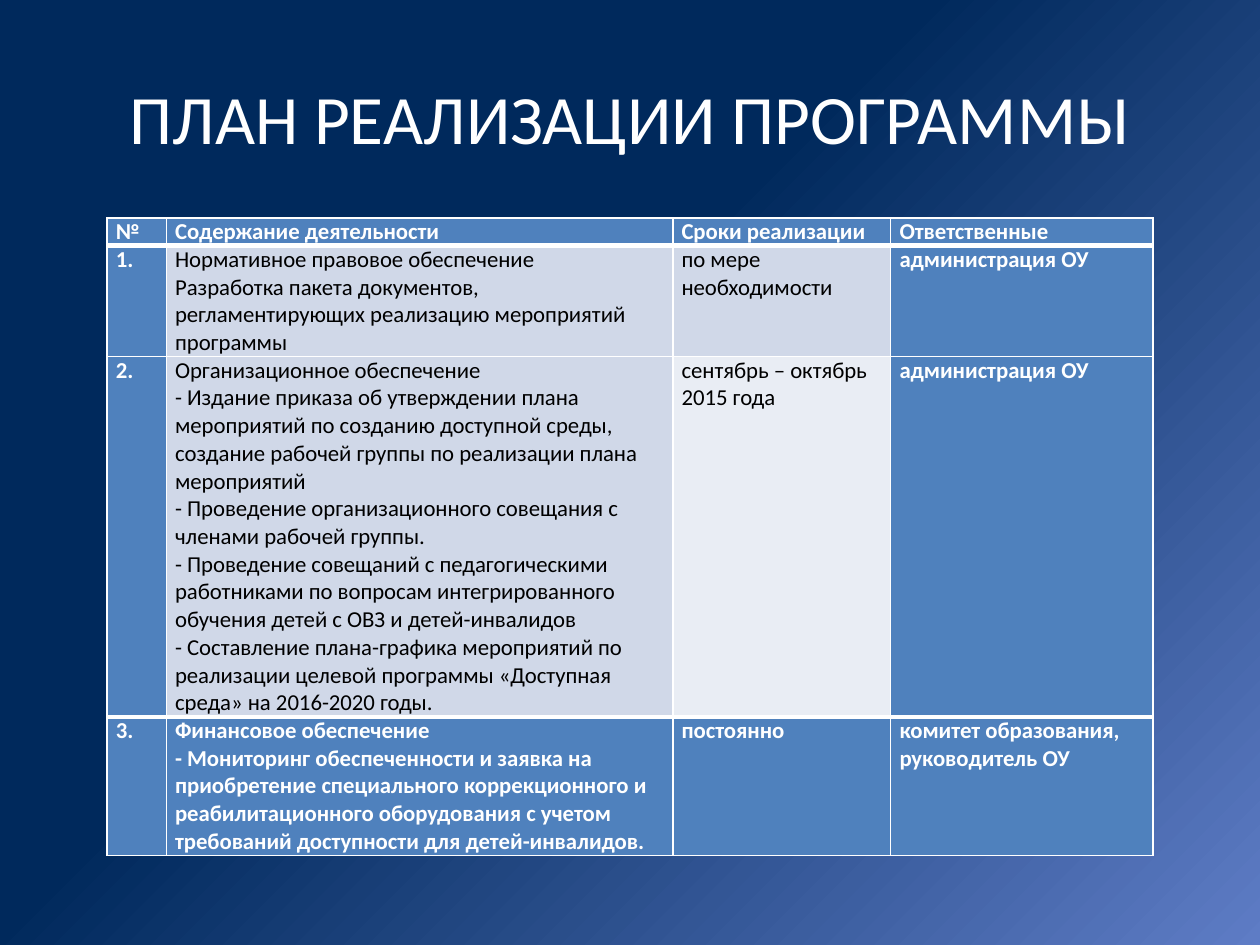
from dataclasses import dataclass

from lxml.etree import SubElement
from pptx import Presentation
from pptx.dml.color import RGBColor
from pptx.enum.text import MSO_ANCHOR, PP_ALIGN
from pptx.oxml.ns import qn
from pptx.util import Inches, Pt


@dataclass(frozen=True)
class Theme:
    font: str = "Calibri"
    title_size: float = 39.6
    table_size: float = 13
    light: str = "FFFFFF"
    dark: str = "000000"
    accent: str = "4F81BD"
    band: str = "D0D8E8"
    pale: str = "E9EDF4"
    glow: str = "5E7CC5"
    night: str = "00295C"
    thin: float = 1
    thick: float = 3


class PlanSlide:
    def __init__(self, deck, theme):
        self.theme = theme
        self.width, self.height = deck.slide_width, deck.slide_height
        self.slide = deck.slides.add_slide(deck.slide_layouts[6])

    def box(self, left, top, width, height):
        return (int(left * self.width), int(top * self.height),
                int(width * self.width), int(height * self.height))

    def style(self, paragraph, size, color, bold=False):
        font = paragraph.font
        font.name, font.size, font.bold = self.theme.font, Pt(size), bold
        font.color.rgb = RGBColor.from_string(color)

    def background(self):
        fill = self.slide.background.fill
        fill.gradient()
        stops = ((0, self.theme.glow), (0.58, self.theme.night))
        for stop, (position, color) in zip(fill.gradient_stops, stops):
            stop.position = position
            stop.color.rgb = RGBColor.from_string(color)
        gradient = self.slide.element.find(".//" + qn("a:gradFill"))
        gradient.remove(gradient.find(qn("a:lin")))
        glow = SubElement(gradient, qn("a:path"), {"path": "circle"})
        SubElement(glow, qn("a:fillToRect"), l="100000", t="100000")

    def title(self, wording, *place):
        frame = self.slide.shapes.add_textbox(*self.box(*place)).text_frame
        frame.word_wrap = True
        frame.vertical_anchor = MSO_ANCHOR.MIDDLE
        heading = frame.paragraphs[0]
        heading.text = wording
        heading.alignment = PP_ALIGN.CENTER
        self.style(heading, self.theme.title_size, self.theme.light)

    def borders(self, cell, widths):
        properties = cell._tc.get_or_add_tcPr()
        for index, (side, width) in enumerate(zip("LRTB", widths)):
            line = properties.makeelement(qn(f"a:ln{side}"), {"w": str(Pt(width))})
            properties.insert(index, line)
            solid = SubElement(line, qn("a:solidFill"))
            SubElement(solid, qn("a:srgbClr"), val=self.theme.light)

    def cell(self, cell, wording, fill, rules):
        cell.margin_left = cell.margin_right = Inches(0.07)
        cell.margin_top = cell.margin_bottom = 0
        cell.fill.solid()
        cell.fill.fore_color.rgb = RGBColor.from_string(fill)
        cell.text = wording
        strong = fill == self.theme.accent
        color = self.theme.light if strong else self.theme.dark
        for paragraph in cell.text_frame.paragraphs:
            self.style(paragraph, self.theme.table_size, color, strong)
        self.borders(cell, (self.theme.thin, self.theme.thin, *rules))

    def table(self, rows, fills, column_shares, row_shares, left, top):
        place = self.box(left, top, sum(column_shares), sum(row_shares))
        table = self.slide.shapes.add_table(
            len(rows), len(column_shares), *place).table
        table.horz_banding = False
        for column, share in zip(table.columns, column_shares):
            column.width = int(share * self.width)
        for row, share in zip(table.rows, row_shares):
            row.height = int(share * self.height)
        last = len(rows) - 1
        thin, thick = self.theme.thin, self.theme.thick
        for r, (texts, colors) in enumerate(zip(rows, fills)):
            rules = (thick if r in (1, last) else thin,
                     thick if r in (0, last - 1) else thin)
            for c, (wording, fill) in enumerate(zip(texts, colors)):
                self.cell(table.cell(r, c), wording, fill, rules)


PLAN = [
    ("№", "Содержание деятельности", "Сроки реализации", "Ответственные"),
    ("1.",
     "Нормативное правовое обеспечение\n"
     "Разработка пакета документов, регламентирующих реализацию мероприятий программы",
     "по мере необходимости", "администрация ОУ"),
    ("2.",
     "Организационное обеспечение\n"
     "- Издание приказа об утверждении плана мероприятий по созданию доступной среды, "
     "создание рабочей группы по реализации плана мероприятий\n"
     "- Проведение организационного совещания с членами рабочей группы.\n"
     "- Проведение совещаний с педагогическими работниками по вопросам "
     "интегрированного обучения детей с ОВЗ и детей-инвалидов\n"
     "- Составление плана-графика мероприятий по реализации целевой программы "
     "«Доступная среда» на 2016-2020 годы.",
     "сентябрь – октябрь 2015 года", "администрация ОУ"),
    ("3.",
     "Финансовое обеспечение\n"
     "- Мониторинг обеспеченности и заявка на приобретение специального коррекционного "
     "и реабилитационного оборудования с учетом требований доступности для детей-инвалидов.",
     "постоянно", "комитет образования, руководитель ОУ"),
]


def main():
    deck = Presentation()
    deck.slide_width, deck.slide_height = Inches(10), Inches(7.5)
    theme = Theme()
    page = PlanSlide(deck, theme)
    page.background()
    page.title("ПЛАН РЕАЛИЗАЦИИ ПРОГРАММЫ", 0.05, 0.04, 0.9, 1 / 6)
    solid = [theme.accent] * 4
    fills = [
        solid,
        [theme.accent, theme.band, theme.band, theme.accent],
        [theme.accent, theme.band, theme.pale, theme.accent],
        solid,
    ]
    columns = [inches / 10 for inches in (0.47, 4.02, 1.73, 2.08)]
    rows = [inches / 7.5 for inches in (0.22, 0.88, 2.86, 1.1)]
    page.table(PLAN, fills, columns, rows, 0.085, 1.73 / 7.5)
    deck.save("out.pptx")


if __name__ == "__main__":
    main()
